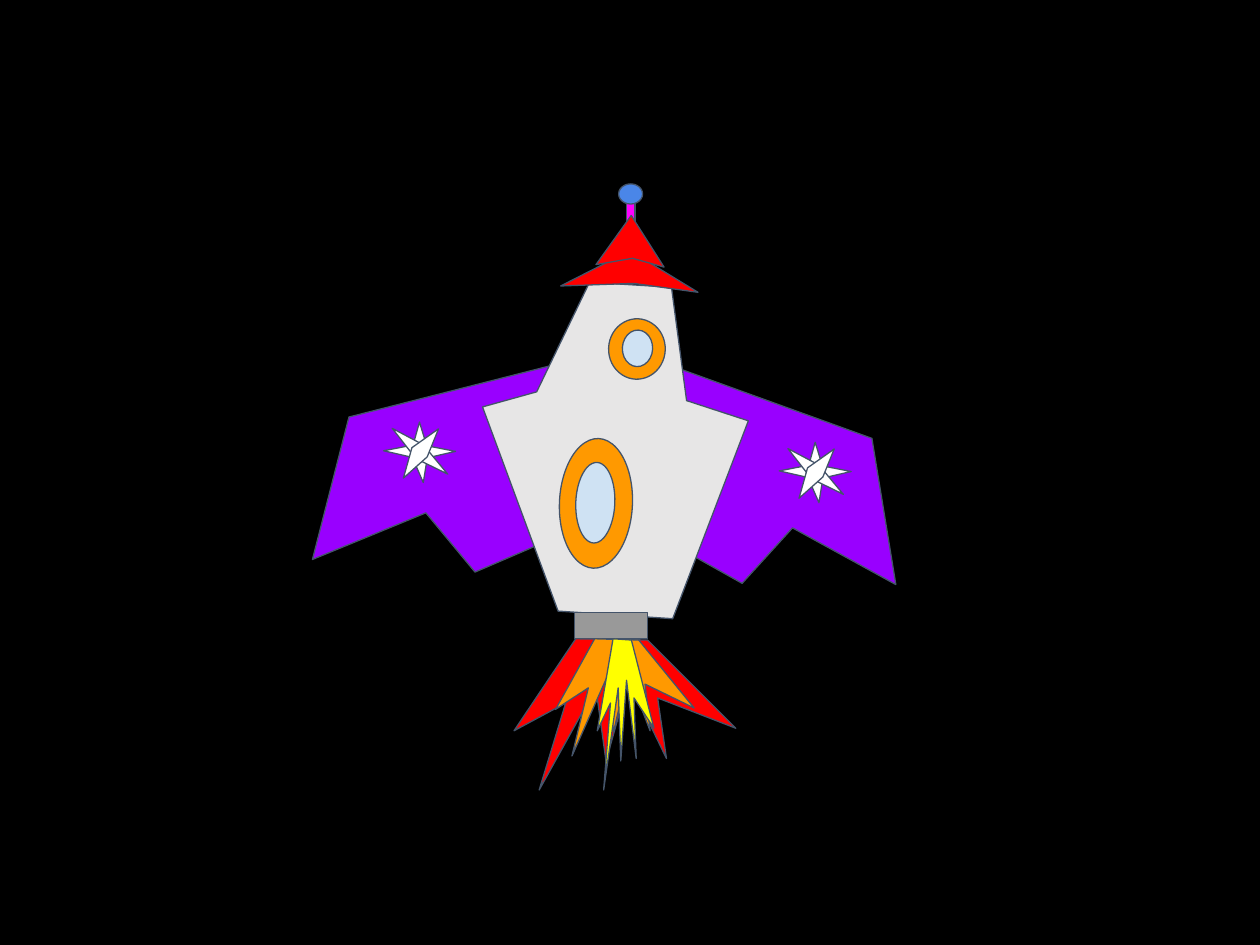
"""Draw a rocket in flight on a black slide."""
from dataclasses import dataclass
from math import cos, radians, sin

from pptx import Presentation
from pptx import util as u
from pptx.dml.color import RGBColor
from pptx.enum import shapes

Point = tuple[float, float]
COLORS = {
    "space": "000000", "outline": "44546A", "wing": "9900FF", "hull": "E7E6E6",
    "red": "FF0000", "orange": "FF9900", "yellow": "FFFF00", "glass": "CFE2F3",
    "nozzle": "999999", "mast": "FF00FF", "beacon": "4A86E8", "star": "FFFFFF",
}
TILT = 2.4
RECT, OVAL = shapes.MSO_SHAPE.RECTANGLE, shapes.MSO_SHAPE.OVAL


@dataclass
class Preset:
    """A preset shape in a left, top, width, height box."""
    kind: shapes.MSO_SHAPE
    box: tuple[float, float, float, float]
    color: str
    rotation: float = 0


@dataclass
class Polygon:
    """A closed outline, given as it stands before rotation."""
    points: list[Point]
    color: str
    rotation: float = 0


def rgb(name: str) -> RGBColor:
    """Look up a colour by name."""
    return RGBColor.from_string(COLORS[name])


def turn(point: Point, degrees: float) -> Point:
    """Turn a point clockwise about the origin."""
    (x, y), a = point, radians(degrees)
    return x * cos(a) - y * sin(a), x * sin(a) + y * cos(a)


def tilted(points: list[Point], color: str) -> Polygon:
    """Make a tilted polygon from the places its corners take on the slide."""
    level = [turn(p, -TILT) for p in points]
    mx, my = ((min(v) + max(v)) / 2 for v in zip(*level))
    cx, cy = turn((mx, my), TILT)
    return Polygon([(x + cx - mx, y + cy - my) for x, y in level], color, TILT)


def porthole(rim: tuple, glass: tuple) -> list[Preset]:
    """Make a window of a rim and a pane."""
    return [Preset(OVAL, rim, "orange", TILT), Preset(OVAL, glass, "glass", TILT)]


def star(dx: float, dy: float) -> list[Polygon]:
    """Make a star of four crossed blades, moved by an offset."""
    thin = [(6.46, 3.46), (6.41, 3.76), (6.49, 4.03), (6.53, 3.73)]
    wide = [(6.47, 3.51), (6.4, 3.76), (6.5, 3.99), (6.54, 3.74)]
    blades = [(thin, 273.5), (wide, 0), (thin, 312.5), (wide, 39.1)]
    return [Polygon([(x + dx, y + dy) for x, y in blade], "star", rotation)
            for blade, rotation in blades]


def draw(s, part: Preset | Polygon):
    """Draw one part and return its shape."""
    if isinstance(part, Preset):
        sp = s.shapes.add_shape(part.kind, *map(u.Inches, part.box))
    else:
        start, *rest = [(u.Inches(x), u.Inches(y)) for x, y in part.points]
        builder = s.shapes.build_freeform(*start)
        builder.add_line_segments(rest, close=True)
        sp = builder.convert_to_shape()
    sp.rotation = part.rotation
    sp.shadow.inherit = False
    for fmt, color in {sp.fill: part.color, sp.line.fill: "outline"}.items():
        fmt.solid()
        fmt.fore_color.rgb = rgb(color)
    sp.line.width = u.Pt(0.75)
    return sp


def draw_layer(s, parts: list) -> None:
    """Draw the parts of a layer, grouped if there are several."""
    drawn = [draw(s, part) for part in parts]
    if len(drawn) > 1:
        s.shapes.add_group_shape(drawn)


SHIP = [
    tilted([(4.93, 2.76), (2.77, 3.31), (2.48, 4.44), (3.38, 4.07),
            (3.77, 4.54), (4.84, 4.08)], "wing"),
    tilted([(4.93, 2.76), (6.92, 3.48), (7.11, 4.64), (6.29, 4.19),
            (5.89, 4.63), (4.91, 4.08)], "wing"),
    tilted([(4.68, 2.24), (4.26, 3.11), (3.83, 3.23), (4.43, 4.85),
            (5.34, 4.91), (5.94, 3.34), (5.45, 3.18), (5.33, 2.28)], "hull"),
    tilted([(5, 1.99), (4.45, 2.27), (5.03, 2.25), (5.54, 2.32)], "red"),
    tilted([(5.01, 1.71), (4.73, 2.1), (5.02, 2.05), (5.27, 2.12)], "red"),
    *porthole((4.44, 3.48, 0.58, 1.03), (4.57, 3.67, 0.31, 0.64)),
    *porthole((4.83, 2.53, 0.45, 0.48), (4.94, 2.62, 0.24, 0.29)),
]
OUTER_FLAME = [(4.57, 5.07), (4.08, 5.8), (4.49, 5.58), (4.28, 6.27),
               (4.73, 5.46), (4.81, 6.04), (4.99, 5.4), (5.29, 6.02),
               (5.22, 5.54), (5.84, 5.78), (5.14, 5.08)]
MIDDLE_FLAME = [(4.72, 5.07), (4.41, 5.63), (4.67, 5.46), (4.54, 6),
                (4.82, 5.37), (4.87, 5.81), (4.98, 5.33), (5.16, 5.8),
                (5.12, 5.43), (5.51, 5.62), (5.07, 5.08)]
INNER_FLAME = [(4.74 + (x - 4.08) * 0.45 / 1.76, y) for x, y in OUTER_FLAME]
LAYERS = [
    [Preset(RECT, (4.97, 1.54, 0.07, 0.57), "mast")],
    SHIP,
    [Preset(RECT, (4.56, 4.86, 0.58, 0.21), "nozzle")],
    [Polygon(OUTER_FLAME, "red"), Polygon(MIDDLE_FLAME, "orange"),
     Polygon(INNER_FLAME, "yellow")],
    [Preset(OVAL, (4.91, 1.46, 0.19, 0.16), "beacon")],
    star(0, 0),
    star(-3.14, -0.16),
]


def main() -> None:
    """Build and save the slide."""
    prs = Presentation()
    for name, value in {"slide_width": 10, "slide_height": 7.5}.items():
        setattr(prs, name, u.Inches(value))
    s = prs.slides.add_slide(prs.slide_layouts[6])
    s.background.fill.solid()
    s.background.fill.fore_color.rgb = rgb("space")
    for parts in LAYERS:
        draw_layer(s, parts)
    prs.save("out.pptx")


if __name__ == "__main__":
    main()
